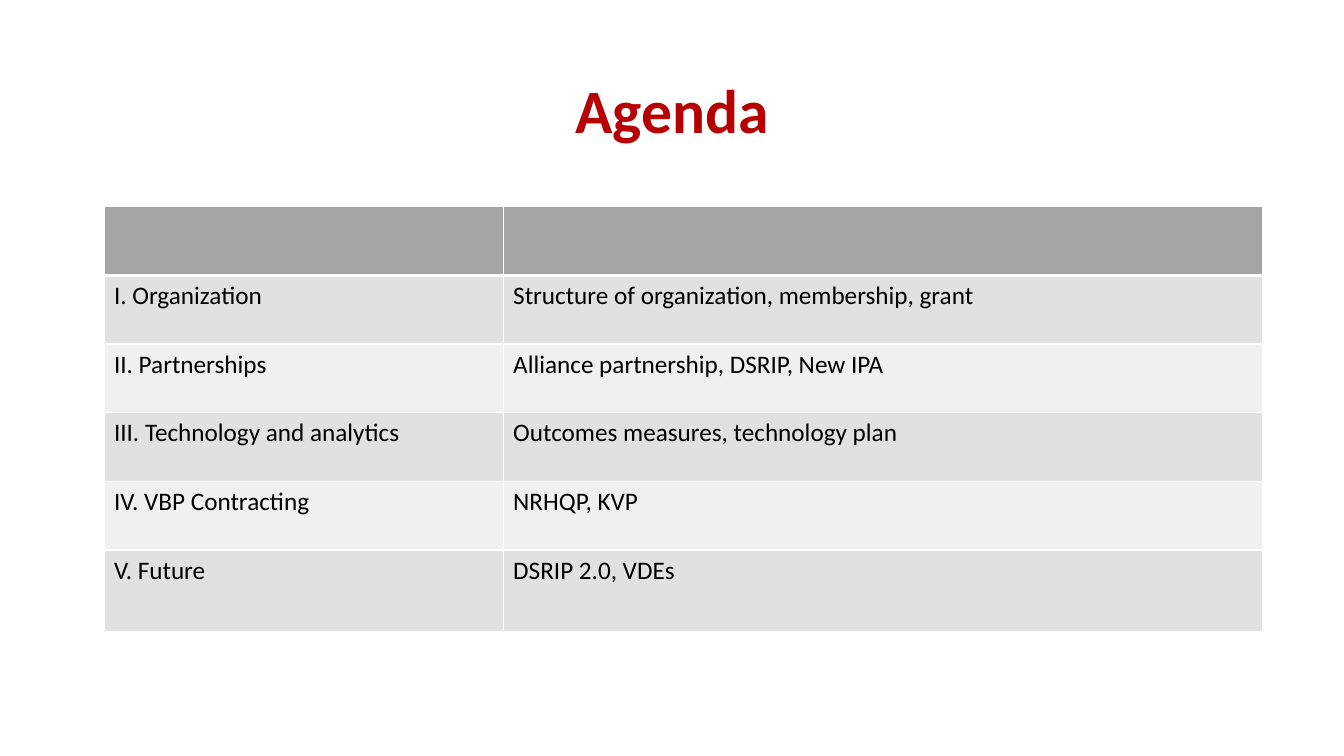
from lxml import etree
from pptx import Presentation
from pptx.dml.color import RGBColor
from pptx.enum.text import MSO_ANCHOR, PP_ALIGN
from pptx.oxml.ns import qn
from pptx.util import Cm, Pt

CENTER, LEFT = PP_ALIGN.CENTER, PP_ALIGN.LEFT
MIDDLE, TOP = MSO_ANCHOR.MIDDLE, MSO_ANCHOR.TOP
TITLE_ONLY = 5

FONT = "Calibri"
RED, BLACK, WHITE = "B70001", "000000", "FFFFFF"
HEADER_FILL = "A5A5A5"
BAND_FILLS = ("E1E1E1", "F0F0F0")

COLUMN_WIDTHS = (10.06, 19.15)
ROW_HEIGHT, LAST_ROW_HEIGHT = 1.73, 2.06
AGENDA = [
    ("I. Organization", "Structure of organization, membership, grant"),
    ("II. Partnerships", "Alliance partnership, DSRIP, New IPA"),
    ("III. Technology and analytics", "Outcomes measures, technology plan"),
    ("IV. VBP Contracting", "NRHQP, KVP"),
    ("V. Future", "DSRIP 2.0, VDEs"),
]


def color(hex_code):
    return RGBColor.from_string(hex_code)


def write(frame, text, size=18, fill=BLACK, bold=False, align=LEFT, spacing=1.0):
    para = frame.paragraphs[0]
    para.alignment = align
    para.line_spacing = spacing
    span = para.add_run()
    span.text = text
    span.font.name = FONT
    span.font.size = Pt(size)
    span.font.bold = bold
    span.font.color.rgb = color(fill)


def set_borders(cell, top=1, bottom=1):
    """Draw white cell borders; widths are in points."""
    properties = cell._tc.get_or_add_tcPr()
    widths = {"a:lnL": 1, "a:lnR": 1, "a:lnT": top, "a:lnB": bottom}
    for position, (tag, width) in enumerate(widths.items()):
        line = etree.Element(qn(tag), w=str(Pt(width)))
        fill = etree.SubElement(line, qn("a:solidFill"))
        etree.SubElement(fill, qn("a:srgbClr"), val=WHITE)
        properties.insert(position, line)


def place_title(page, left, top, width, height):
    title = page.shapes.title
    title.left, title.top = Cm(left), Cm(top)
    title.width, title.height = Cm(width), Cm(height)
    title.text_frame.vertical_anchor = MIDDLE
    title.text_frame.word_wrap = True
    write(title.text_frame, "Agenda", size=44, fill=RED, bold=True,
          align=CENTER, spacing=0.9)


def place_agenda(page, left, top):
    """Add the agenda table below an empty header row."""
    heights = [ROW_HEIGHT] * len(AGENDA) + [LAST_ROW_HEIGHT]
    table = page.shapes.add_table(
        len(heights), len(COLUMN_WIDTHS), Cm(left), Cm(top),
        Cm(sum(COLUMN_WIDTHS)), Cm(sum(heights))).table
    for column, width in zip(table.columns, COLUMN_WIDTHS):
        column.width = Cm(width)
    for row, height in zip(table.rows, heights):
        row.height = Cm(height)

    for cell in table.rows[0].cells:
        cell.fill.solid()
        cell.fill.fore_color.rgb = color(HEADER_FILL)
        set_borders(cell, bottom=3)
    for index, texts in enumerate(AGENDA):
        for cell, text in zip(table.rows[index + 1].cells, texts):
            cell.fill.solid()
            cell.fill.fore_color.rgb = color(BAND_FILLS[index % 2])
            cell.vertical_anchor = TOP
            set_borders(cell, top=3 if index == 0 else 1)
            write(cell.text_frame, text)


def main():
    deck = Presentation()
    deck.slide_width, deck.slide_height = Cm(33.87), Cm(19.05)
    page = deck.slides.add_slide(deck.slide_layouts[TITLE_ONLY])
    place_title(page, 2.34, 1.02, 29.21, 3.68)
    place_agenda(page, 2.62, 5.21)
    deck.save("out.pptx")


if __name__ == "__main__":
    main()
